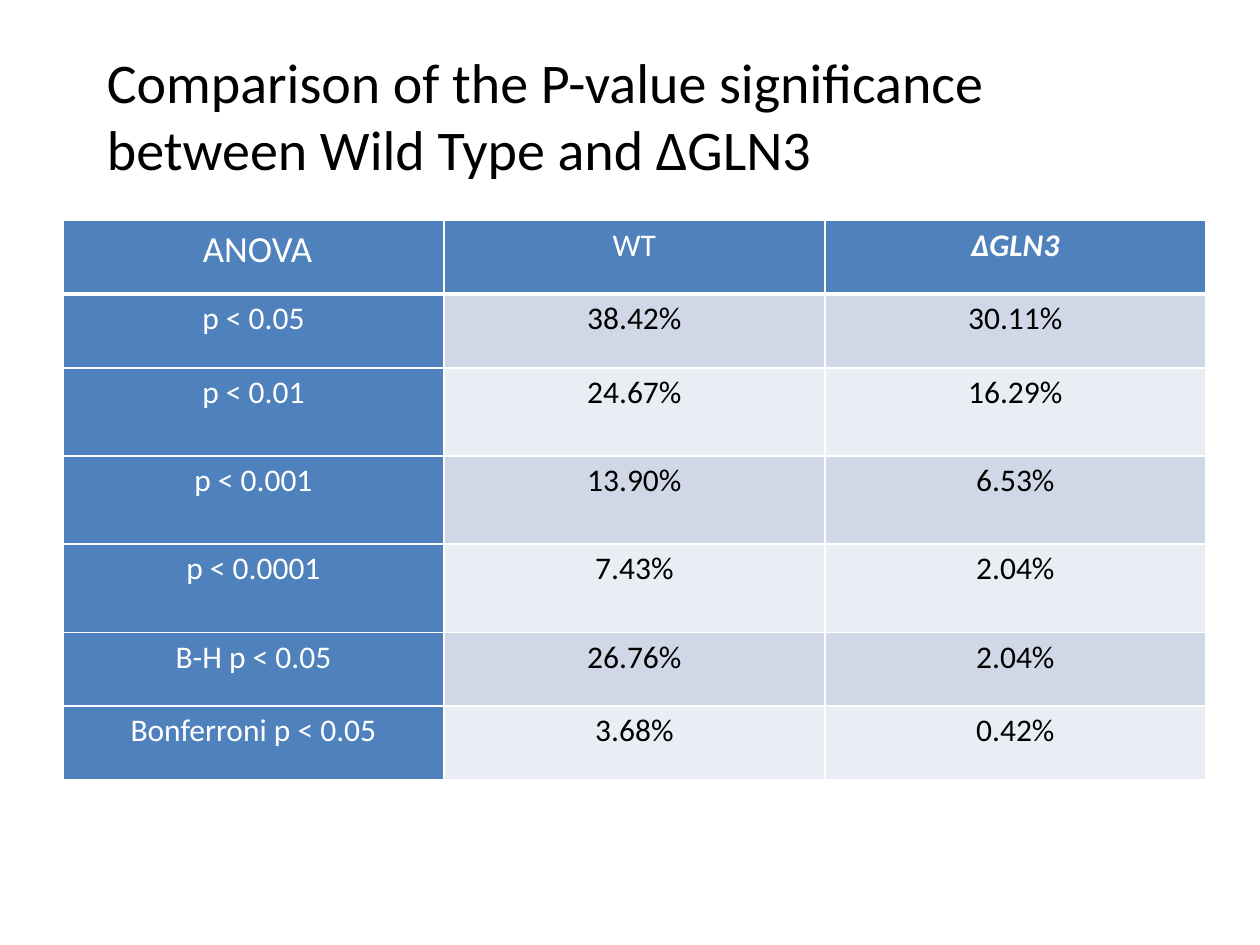
from lxml.etree import SubElement
from pptx import Presentation
from pptx.dml.color import RGBColor as RGB
from pptx.enum.text import PP_ALIGN as Align
from pptx.oxml.ns import qn
from pptx.util import Inches, Pt

# Content
TITLE = "Comparison of the P-value significance between Wild Type and ΔGLN3"
ROWS = [
    (" ANOVA", "WT", "ΔGLN3"),
    ("p < 0.05", "38.42%", "30.11%"),
    ("p < 0.01", "24.67%", "16.29%"),
    ("p < 0.001", "13.90%", "6.53%"),
    ("p < 0.0001", "7.43%", "2.04%"),
    ("B-H p < 0.05", "26.76%", "2.04%"),
    ("Bonferroni p < 0.05", "3.68%", "0.42%"),
]
SHORT, TALL = 0.585, 0.7
HIGH = [SHORT, SHORT, TALL, TALL, TALL, SHORT, SHORT]
WIDE = 9.07

# Style
FONT = "Calibri"
BLACK = RGB(0, 0, 0)
WHITE = RGB(255, 255, 255)
BLUE = RGB(0x4F, 0x81, 0xBD)
BANDS = [RGB(0xE9, 0xED, 0xF4), RGB(0xD0, 0xD8, 0xE8)]


def style(para, size, color):
    font = para.runs[0].font
    font.name, font.size = FONT, Pt(size)
    font.color.rgb = color
    return font


def edge(cell, base):
    """Draw white cell borders, with the bottom one of the given width."""
    props = cell._tc.get_or_add_tcPr()
    for side, width in (("L", 1), ("R", 1), ("T", 1), ("B", base)):
        line = SubElement(props, qn(f"a:ln{side}"), w=str(Pt(width)))
        fill = SubElement(line, qn("a:solidFill"))
        SubElement(fill, qn("a:srgbClr"), val=str(WHITE))


prs = Presentation()
prs.slide_width, prs.slide_height = Inches(10), Inches(7.5)
slide = prs.slides.add_slide(prs.slide_layouts[6])

# Table
table = slide.shapes.add_table(
    len(ROWS), len(ROWS[0]), Inches(0.5), Inches(1.75),
    Inches(WIDE), Inches(sum(HIGH))).table
for col in table.columns:
    col.width = Inches(WIDE / len(ROWS[0]))
for r, row in enumerate(ROWS):
    table.rows[r].height = Inches(HIGH[r])
    for c, text in enumerate(row):
        cell = table.cell(r, c)
        head = r == 0 or c == 0
        edge(cell, 3 if r == 0 else 1)
        cell.fill.solid()
        cell.fill.fore_color.rgb = BLUE if head else BANDS[r % 2]
        cell.margin_left = cell.margin_right = Inches(0.07)
        cell.margin_top = cell.margin_bottom = 0
        para = cell.text_frame.paragraphs[0]
        para.text = text
        para.alignment, para.line_spacing = Align.CENTER, 1.15
        font = style(para, 21 if r == c == 0 else 18, WHITE if head else BLACK)
        font.bold = font.italic = r == 0 and c == 2

# Title
frame = slide.shapes.add_textbox(
    Inches(0.75), Inches(0.33), Inches(8.07), Inches(1.18)).text_frame
frame.word_wrap = True
frame.text = TITLE
style(frame.paragraphs[0], 32, BLACK)

prs.save("out.pptx")
